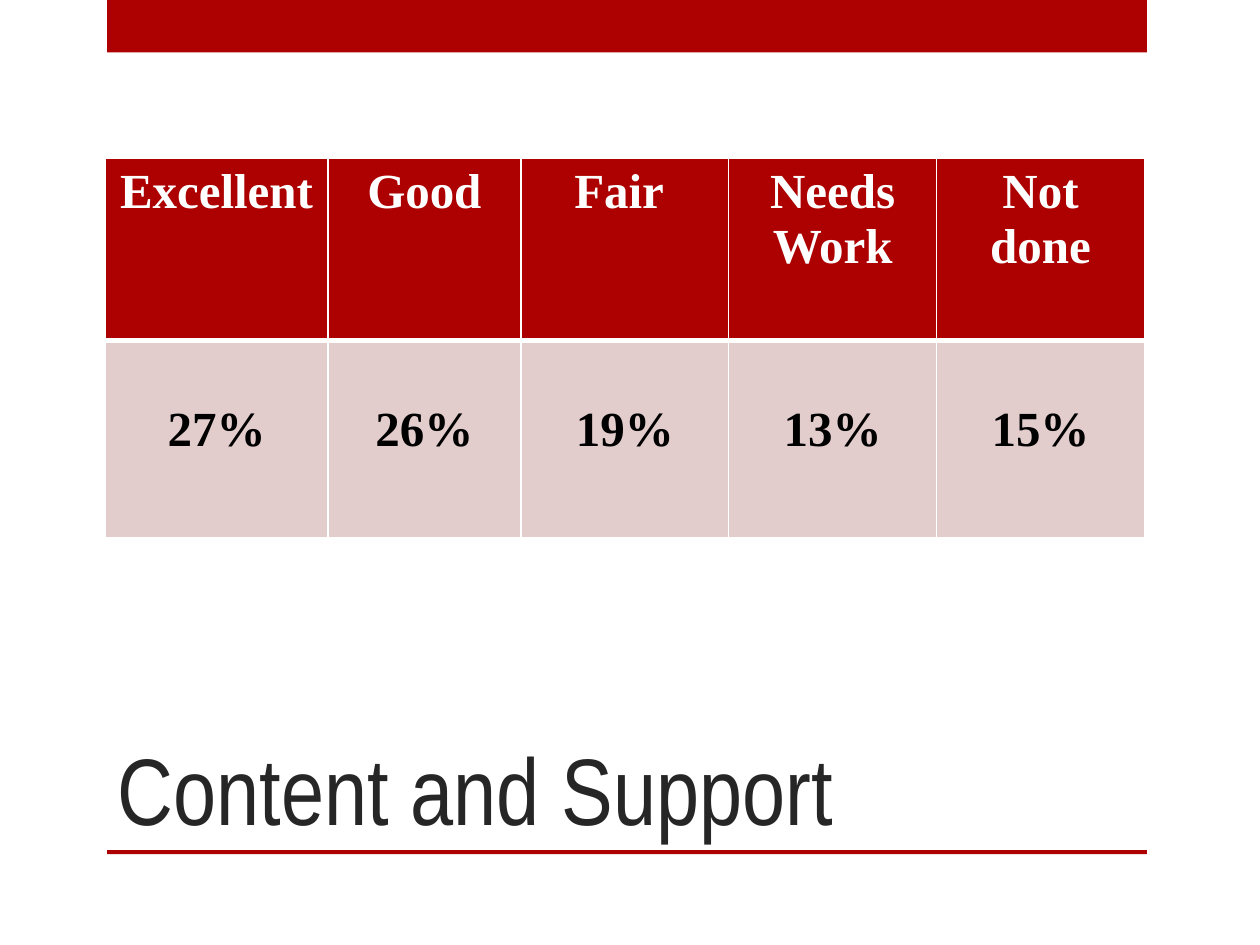
from dataclasses import dataclass
from lxml import etree
from pptx import Presentation
from pptx import util as u
from pptx.dml import color as c
from pptx.enum import shapes, text
from pptx.oxml import ns


@dataclass(frozen=True)
class Theme:
    red: str = "AD0101"
    pink: str = "E3CCCC"
    white: str = "FFFFFF"
    black: str = "000000"
    gray: str = "262626"
    head: str = "Arial Narrow"
    body: str = "Times New Roman"
    big: int = 54
    mid: int = 28


def write(frame, words, *, font, size, color, bold=False, align="LEFT", anchor="TOP"):
    frame.word_wrap = True
    frame.vertical_anchor = text.MSO_ANCHOR[anchor]
    par = frame.paragraphs[0]
    par.alignment = text.PP_ALIGN[align]
    run = par.add_run()
    run.text = words
    run.font.name = font
    run.font.size = u.Pt(size)
    run.font.bold = bold
    run.font.color.rgb = c.RGBColor.from_string(color)


def edge(cell, widths, color):
    props = cell._tc.get_or_add_tcPr()
    for spot, (side, width) in enumerate(widths.items()):
        line = etree.Element(ns.qn(f"a:ln{side}"), w=str(u.Pt(width)))
        fill = etree.SubElement(line, ns.qn("a:solidFill"))
        etree.SubElement(fill, ns.qn("a:srgbClr"), val=color)
        props.insert(spot, line)


theme = Theme()
deck = Presentation()
deck.slide_width, deck.slide_height = u.Cm(25.4), u.Cm(19.05)
slide = deck.slides.add_slide(deck.slide_layouts[5])

for top, height in ((0, 1.06), (17.14, 0.08)):
    bar = slide.shapes.add_shape(
        shapes.MSO_SHAPE.RECTANGLE, u.Cm(2.16), u.Cm(top), u.Cm(20.96), u.Cm(height))
    bar.shadow.inherit = False
    bar.fill.solid()
    bar.fill.fore_color.rgb = c.RGBColor.from_string(theme.red)
    bar.line.fill.background()

title = slide.shapes.title
title.left, title.top = u.Cm(2.12), u.Cm(12.7)
title.width, title.height = u.Cm(18.85), u.Cm(4.45)
write(title.text_frame, "Content and Support", font=theme.head,
      size=theme.big, color=theme.gray, anchor="BOTTOM")
title.text_frame.auto_size = text.MSO_AUTO_SIZE.NONE

scores = {"Excellent": "27%", "Good": "26%", "Fair ": "19%",
          "Needs Work": "13%", "Not done": "15%"}
widths = (4.49, 3.89, 4.19, 4.19, 4.19)
rows = (
    (scores.keys(), 3.66, theme.red, theme.white, 0.13, {"L": 1, "R": 1, "T": 1, "B": 3}),
    (scores.values(), 3.99, theme.pink, theme.black, 1.26, {"L": 1, "R": 1, "T": 3, "B": 1}),
)
grid = slide.shapes.add_table(
    len(rows), len(scores), u.Cm(2.12), u.Cm(3.2), u.Cm(20.95), u.Cm(7.65)).table
for col, width in zip(grid.columns, widths):
    col.width = u.Cm(width)
for row, (words, height, fill, ink, pad, lines) in zip(grid.rows, rows):
    row.height = u.Cm(height)
    for cell, word in zip(row.cells, words):
        cell.fill.solid()
        cell.fill.fore_color.rgb = c.RGBColor.from_string(fill)
        cell.margin_top = u.Cm(pad)
        write(cell.text_frame, word, font=theme.body, size=theme.mid,
              color=ink, bold=True, align="CENTER")
        edge(cell, lines, theme.white)

deck.save("out.pptx")
